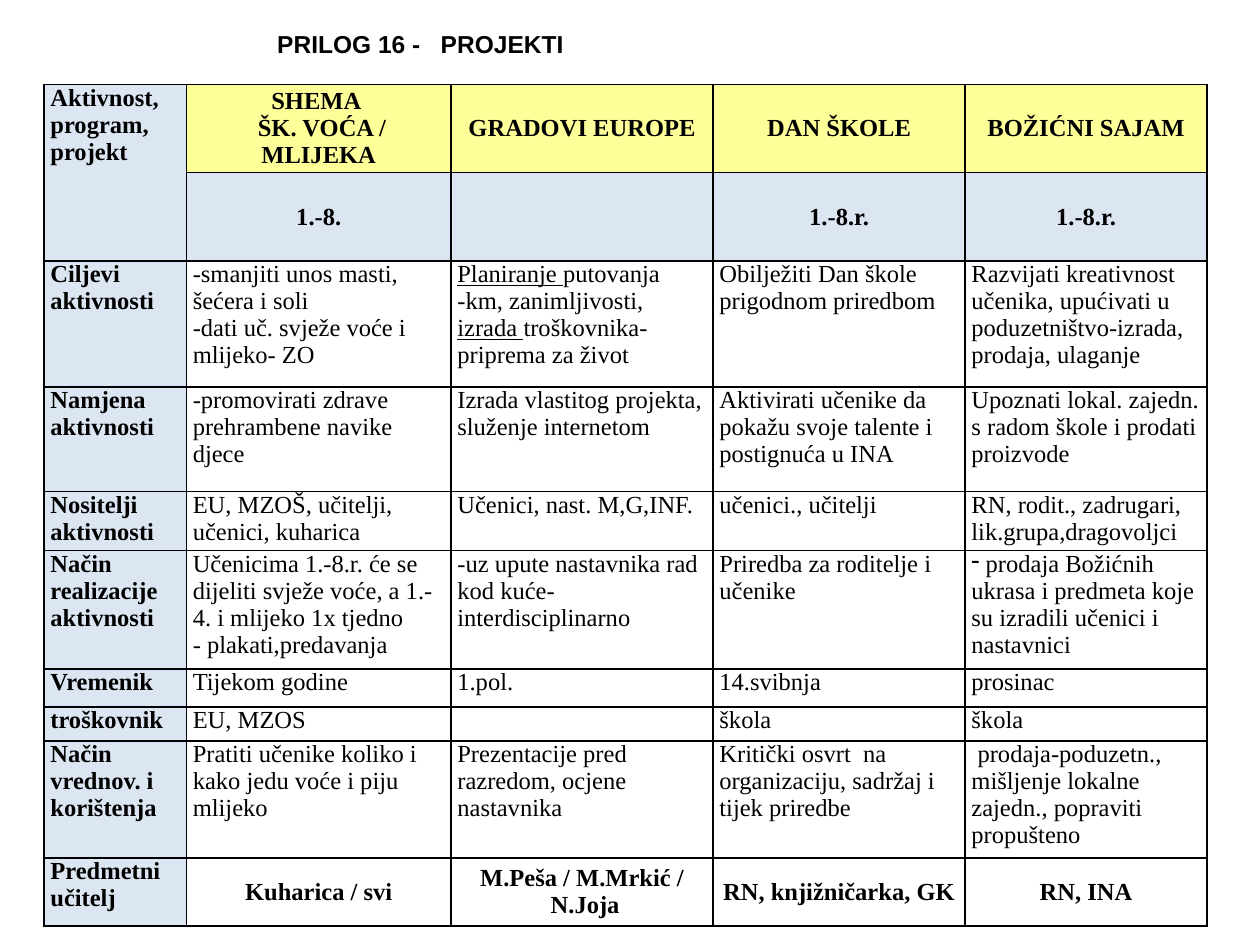
import pptx
import pptx.util
import pptx.dml.color
import pptx.enum.text
import lxml.etree
from pptx.oxml.ns import qn

Inches, Pt = pptx.util.Inches, pptx.util.Pt
ALIGN, ANCHOR = pptx.enum.text.PP_ALIGN, pptx.enum.text.MSO_ANCHOR

COLORS = {"ink": "000000", "label": "DCE6F2", "heading": "FFFF99"}
TITLE = "PRILOG 16 -   PROJEKTI"
COLUMN_WIDTHS = [1.13, 2.1, 2.08, 2, 1.92]
ROW_HEIGHTS = [0.7, 0.7, 1, 0.83, 0.47, 0.94, 0.3, 0.27, 0.93, 0.54]
CENTERED_ROWS = (0, 1, 9)
BULLET = "•"
UNDERLINE = "_"
ROWS = [
    ["Aktivnost, program, projekt", "SHEMA \n ŠK. VOĆA / MLIJEKA", "GRADOVI EUROPE",
     "DAN ŠKOLE", "BOŽIĆNI SAJAM"],
    ["", "1.-8.", "", "1.-8.r.", "1.-8.r."],
    ["Ciljevi aktivnosti",
     "-smanjiti unos masti, šećera i soli\n-dati uč. svježe voće i mlijeko- ZO",
     "_Planiranje _putovanja -km, zanimljivosti, _izrada _troškovnika- priprema za život",
     "Obilježiti Dan škole prigodnom priredbom",
     "Razvijati kreativnost učenika, upućivati u poduzetništvo-izrada, prodaja, ulaganje"],
    ["Namjena aktivnosti", "-promovirati zdrave prehrambene navike djece",
     "Izrada vlastitog projekta, služenje internetom",
     "Aktivirati učenike da pokažu svoje talente i postignuća u INA",
     "Upoznati lokal. zajedn. s radom škole i prodati proizvode"],
    ["Nositelji aktivnosti", "EU, MZOŠ, učitelji, učenici, kuharica",
     "Učenici, nast. M,G,INF.", "učenici., učitelji",
     "RN, rodit., zadrugari, lik.grupa,dragovoljci"],
    ["Način realizacije aktivnosti",
     "Učenicima 1.-8.r. će se dijeliti svježe voće, a 1.-4. i mlijeko 1x tjedno\n"
     "- plakati,predavanja",
     "-uz upute nastavnika rad kod kuće-interdisciplinarno",
     "Priredba za roditelje i učenike",
     "• prodaja Božićnih ukrasa i predmeta koje su izradili učenici i nastavnici"],
    ["Vremenik", "Tijekom godine", "1.pol.", "14.svibnja", "prosinac"],
    ["troškovnik", "EU, MZOS", "", "škola", "škola"],
    ["Način vrednov. i korištenja", "Pratiti učenike koliko i kako jedu voće i piju mlijeko",
     "Prezentacije pred razredom, ocjene nastavnika",
     "Kritički osvrt  na organizaciju, sadržaj i tijek priredbe",
     " prodaja-poduzetn., mišljenje lokalne zajedn., popraviti propušteno"],
    ["Predmetni učitelj", "Kuharica / svi", "M.Peša / M.Mrkić /\n N.Joja",
     "RN, knjižničarka, GK", "RN, INA"],
]


def color(name):
    return pptx.dml.color.RGBColor.from_string(COLORS[name])


def apply(target, values):
    for name, value in values.items():
        setattr(target, name, value)


def add_span(para, text, **values):
    span = para.add_run()
    span.text = text
    apply(span.font, {"size": Pt(14), **values})
    span.font.color.rgb = color("ink")


def add_borders(cell):
    properties = cell._tc.get_or_add_tcPr()
    for index, side in enumerate(("lnL", "lnR", "lnT", "lnB")):
        line = lxml.etree.Element(qn("a:" + side), w=str(Pt(1)))
        fill = lxml.etree.SubElement(line, qn("a:solidFill"))
        lxml.etree.SubElement(fill, qn("a:srgbClr"), val=COLORS["ink"])
        properties.insert(index, line)


def fill_cell(cell, text, row, column):
    centered = row in CENTERED_ROWS and column > 0
    apply(cell, {
        "margin_left": Inches(0.05), "margin_right": Inches(0.05),
        "margin_top": 0, "margin_bottom": 0,
        "vertical_anchor": ANCHOR.MIDDLE if centered else ANCHOR.TOP,
    })
    if row == 0 and column > 0:
        fill_name = "heading"
    elif row == 1 or column == 0:
        fill_name = "label"
    else:
        fill_name = None
    if fill_name:
        cell.fill.solid()
        cell.fill.fore_color.rgb = color(fill_name)
    else:
        cell.fill.background()
    add_borders(cell)
    frame = cell.text_frame
    for index, line in enumerate(text.split("\n")):
        para = frame.add_paragraph() if index else frame.paragraphs[0]
        para.alignment = ALIGN.CENTER if centered else ALIGN.LEFT
        if not line:
            lxml.etree.SubElement(para._p, qn("a:endParaRPr"), sz="1400")
            continue
        if line.startswith(BULLET):
            lxml.etree.SubElement(para._p.get_or_add_pPr(), qn("a:buChar"), char="-")
            line = line[len(BULLET):]
        for part, piece in enumerate(line.split(UNDERLINE)):
            if piece:
                add_span(para, piece, name="Times New Roman",
                         bold=centered or column == 0, underline=part % 2 == 1)


def add_title(page):
    box = page.shapes.title
    apply(box, {"left": Inches(1.5), "top": Inches(0.17),
                "width": Inches(4.66), "height": Inches(0.36)})
    apply(box.text_frame, {
        "word_wrap": True, "vertical_anchor": ANCHOR.MIDDLE,
        "auto_size": pptx.enum.text.MSO_AUTO_SIZE.NONE,
        "margin_left": Inches(0.7),
    })
    para = box.text_frame.paragraphs[0]
    para.alignment = ALIGN.LEFT
    add_span(para, TITLE, name="Arial", bold=True)


def add_activity_table(page):
    table = page.shapes.add_table(
        len(ROWS), len(COLUMN_WIDTHS), Inches(0.35), Inches(0.67),
        Inches(sum(COLUMN_WIDTHS)), Inches(sum(ROW_HEIGHTS))).table
    apply(table, {"first_row": False, "horz_banding": False})
    for column, width in zip(table.columns, COLUMN_WIDTHS):
        column.width = Inches(width)
    for row, height in zip(table.rows, ROW_HEIGHTS):
        row.height = Inches(height)
    for row, texts in enumerate(ROWS):
        for column, text in enumerate(texts):
            fill_cell(table.cell(row, column), text, row, column)
    table.cell(0, 0).merge(table.cell(1, 0))


def main():
    deck = pptx.Presentation()
    apply(deck, {"slide_width": Inches(10), "slide_height": Inches(7.5)})
    page = deck.slides.add_slide(deck.slide_layouts[5])
    add_title(page)
    add_activity_table(page)
    deck.save("out.pptx")


if __name__ == "__main__":
    main()
